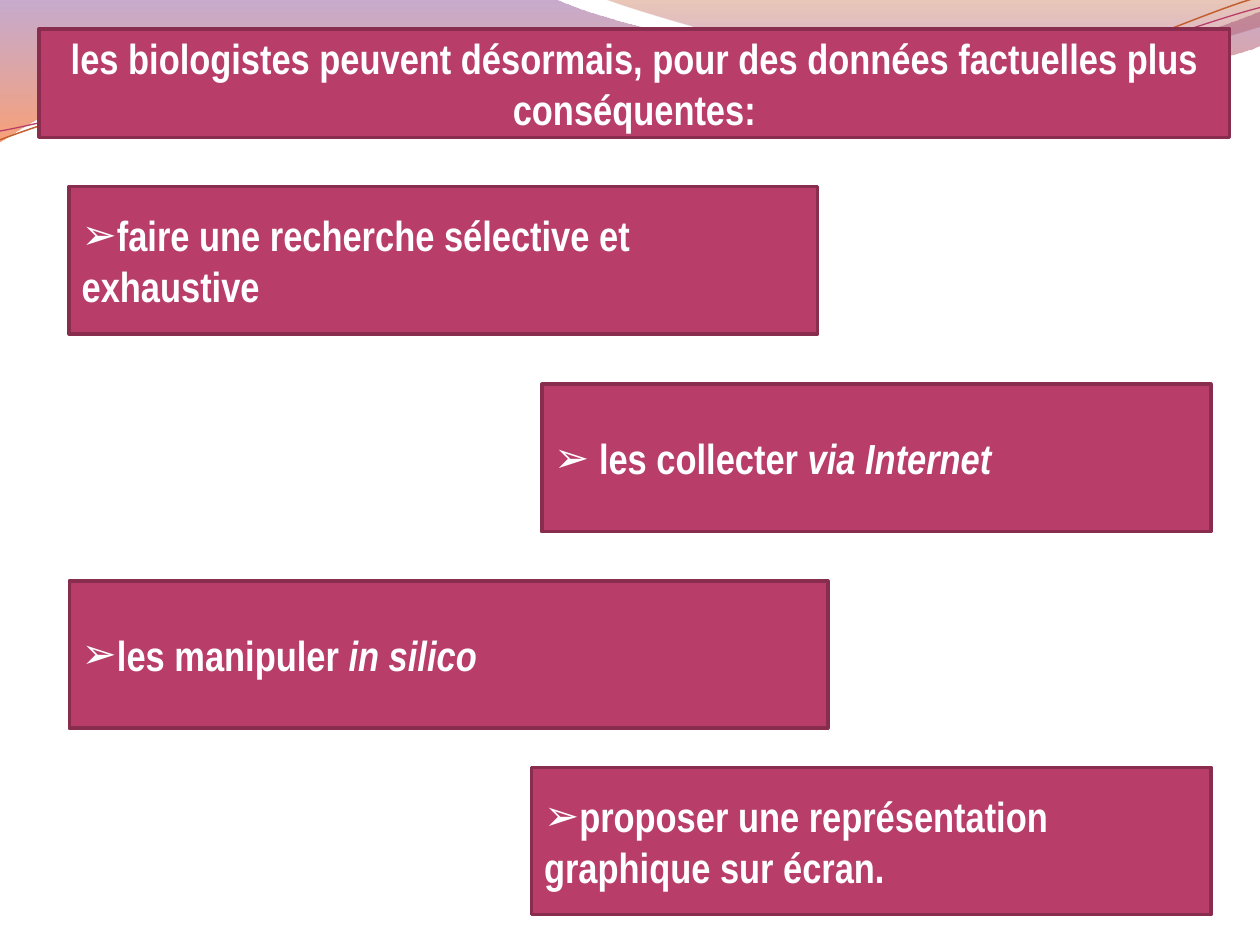
from lxml.etree import SubElement
from pptx import Presentation
from pptx.dml.color import RGBColor
from pptx.enum.shapes import MSO_SHAPE
from pptx.enum.text import MSO_ANCHOR, MSO_AUTO_SIZE, PP_ALIGN
from pptx.oxml.ns import qn
from pptx.util import Inches, Pt

ROSE, WINE, WHITE = "B83D68", "882D4D", "FFFFFF"
FONT = "Arial Narrow"
TITLE = "les biologistes peuvent désormais, pour des données factuelles plus conséquentes:"
HEAD = (0.31, 0.23, 9.45, 0.86)
TALL = 1.17
CARDS = [
    (0.55, 1.48, 5.94, [[("faire une recherche sélective et exhaustive", False)]]),
    (4.3, 3.05, 5.31, [[(" les collecter ", False), ("via Internet", True)]]),
    (0.55, 4.61, 6.02, [[("les manipuler ", False), ("in silico", True)]]),
    (4.22, 6.09, 5.39, [[("proposer une représentation", False)],
                        [("graphique sur écran.", False)]]),
]
WAVES = [
    ([(0, 0), (4.4, -0.01),
      (4.76, 0.17, 6.64, 0.63, 7.58, 0.63), (8.53, 0.63, 9.58, 0.26, 10, 0.09),
      (10.01, 0.36),
      (9.83, 0.44, 8.7, 0.76, 7.46, 0.75), (6.22, 0.75, 3.82, 0.28, 2.57, 0.34),
      (1.29, 0.36, 0.46, 0.83, -0.01, 1.13)],
     [(0, "834591", 45), (100, "F35307", 55)]),
    ([(4.79, -0.01), (5.09, 0.11, 6.82, 0.62, 7.69, 0.65),
      (8.56, 0.69, 9.61, 0.32, 10, 0.21), (10, 0)],
     [(0, "B74915", 30), (80, "A14BB4", 45)]),
]
CURVES = [
    ([(0, 1.11), (0.48, 0.93, 1.58, 0.57, 2.77, 0.52),
      (3.95, 0.47, 5.93, 0.89, 7.13, 0.8), (8.33, 0.71, 9.38, 0.15, 9.98, -0.02)],
     "C45F30", 0.85),
    ([(0, 1.04), (0.47, 0.96, 1.64, 0.61, 2.83, 0.56),
      (4.03, 0.51, 5.97, 0.84, 7.17, 0.75), (8.36, 0.67, 9.41, 0.21, 10, 0.06)],
     ROSE, 0.75),
]


def paint(fmt, tone):
    fmt.solid()
    fmt.fore_color.rgb = RGBColor.from_string(tone)


def draw(segs, close):
    dots = [tuple(map(Inches, seg[-2:])) for seg in segs]
    pen = slide.shapes.build_freeform(*dots[0])
    pen.add_line_segments(dots[1:], close=close)
    shape = pen.convert_to_shape()
    shape.shadow.inherit = False
    steps = list(shape._element.spPr.iter(qn("a:lnTo")))
    for step, seg in zip(steps, segs[1:]):
        if len(seg) == 6:
            bend(step, seg, shape.left, shape.top)
    return shape


def bend(step, seg, left, top):
    step.tag = qn("a:cubicBezTo")
    for kid in list(step):
        step.remove(kid)
    for x, y in zip(seg[::2], seg[1::2]):
        SubElement(step, qn("a:pt"), x=str(Inches(x) - left), y=str(Inches(y) - top))


def blend(shape, stops):
    shape.line.fill.background()
    shape.fill.gradient()
    grad = shape._element.spPr.find(qn("a:gradFill"))
    for kid in list(grad):
        grad.remove(kid)
    group = SubElement(grad, qn("a:gsLst"))
    for pos, tone, alpha in stops:
        stop = SubElement(group, qn("a:gs"), pos=str(pos * 1000))
        clr = SubElement(stop, qn("a:srgbClr"), val=tone)
        SubElement(clr, qn("a:alpha"), val=str(alpha * 1000))
    SubElement(grad, qn("a:lin"), ang="5400000", scaled="0")


def write(para, text, size=24, bold=True, italic=False, tone=WHITE, align=PP_ALIGN.LEFT):
    para.alignment = align
    run = para.add_run()
    run.text = text
    font = run.font
    font.name, font.size, font.bold, font.italic = FONT, Pt(size), bold, italic
    paint(font.fill, tone)


def mark(para):
    props = para._p.get_or_add_pPr()
    props.set("marL", "0")
    props.set("indent", "0")
    SubElement(props, qn("a:buFont"), typeface="Arial")
    SubElement(props, qn("a:buChar"), char="➢")


def dress(shape):
    paint(shape.fill, ROSE)
    paint(shape.line.fill, WINE)
    shape.line.width = Pt(2)
    frame = shape.text_frame
    frame.word_wrap = True
    frame.auto_size = MSO_AUTO_SIZE.NONE
    frame.vertical_anchor = MSO_ANCHOR.MIDDLE
    return frame


deck = Presentation()
deck.slide_width, deck.slide_height = Inches(10), Inches(7.5)
slide = deck.slides.add_slide(deck.slide_layouts[5])
paint(slide.background.fill, WHITE)

for segs, stops in WAVES:
    blend(draw(segs, True), stops)
for segs, tone, width in CURVES:
    curve = draw(segs, False)
    curve.fill.background()
    paint(curve.line.fill, tone)
    curve.line.width = Pt(width)

title = slide.shapes.title
title.left, title.top, title.width, title.height = map(Inches, HEAD)
slide.shapes._spTree.append(title._element)
write(dress(title).paragraphs[0], TITLE, align=PP_ALIGN.CENTER)

for left, top, width, lines in CARDS:
    card = slide.shapes.add_shape(MSO_SHAPE.RECTANGLE, *map(Inches, (left, top, width, TALL)))
    card.shadow.inherit = False
    frame = dress(card)
    for n, line in enumerate(lines):
        para = frame.add_paragraph() if n else frame.paragraphs[0]
        for text, italic in line:
            write(para, text, italic=italic)
        if n == 0:
            mark(para)

deck.save("out.pptx")
